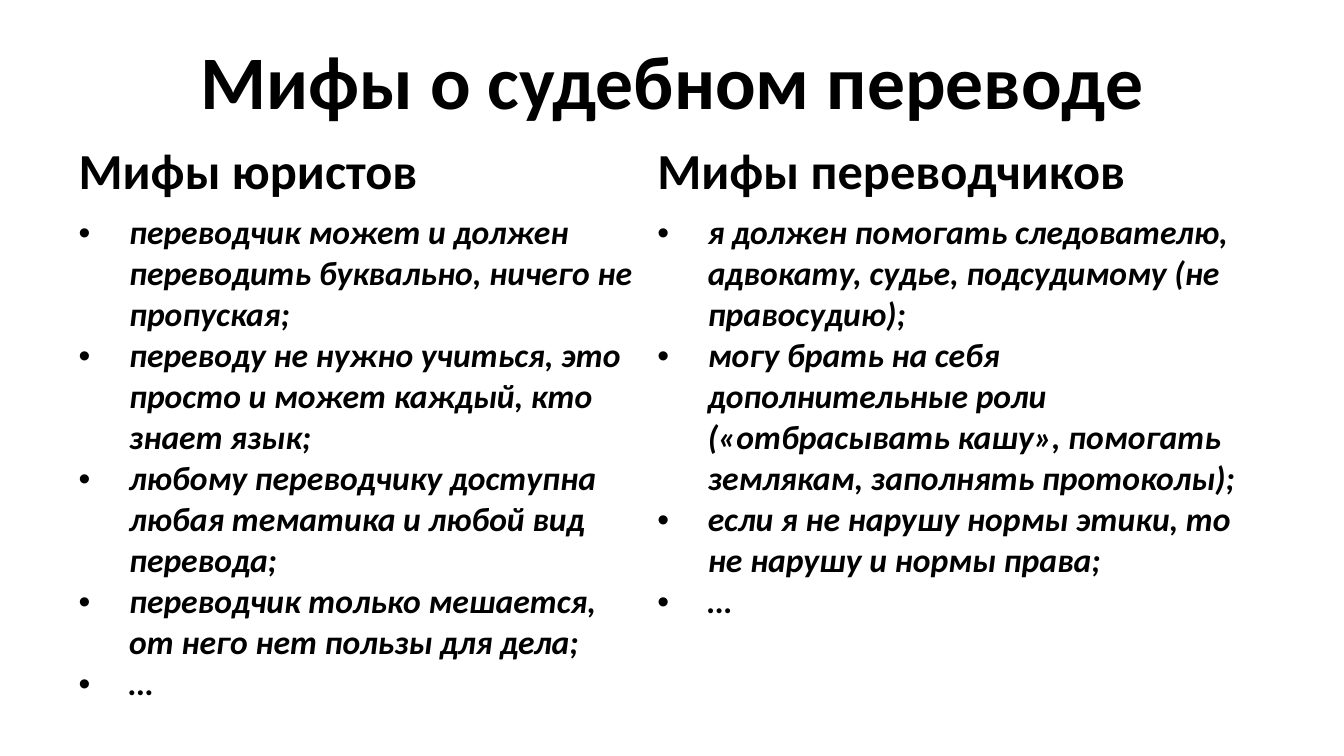
from lxml import etree
from pptx import Presentation
from pptx.dml.color import RGBColor
from pptx.enum.text import MSO_ANCHOR, PP_ALIGN
from pptx.oxml import parse_xml
from pptx.oxml.ns import nsdecls, qn
from pptx.util import Inches, Pt

CENTER = PP_ALIGN.CENTER
MIDDLE = MSO_ANCHOR.MIDDLE
FONT = "Calibri"
BLACK = "000000"
WHITE = "FFFFFF"

MYTHS = {
    "Мифы юристов": [
        "переводчик может и должен переводить буквально, ничего не пропуская;",
        "переводу не нужно учиться, это просто и может каждый, кто знает язык;",
        "любому переводчику доступна любая тематика и любой вид перевода;",
        "переводчик только мешается, от него нет пользы для дела;",
        "…",
    ],
    "Мифы переводчиков": [
        "я должен помогать следователю, адвокату, судье, подсудимому (не правосудию);",
        "могу брать на себя дополнительные роли («отбрасывать кашу», помогать "
        "землякам, заполнять протоколы);",
        "если я не нарушу нормы этики, то не нарушу и нормы права;",
        "…",
    ],
}


def color(hex_value):
    return RGBColor.from_string(hex_value)


def style_runs(paragraph, size, italic=False):
    for run in paragraph.runs:
        run.font.name = FONT
        run.font.size = Pt(size)
        run.font.bold = True
        run.font.italic = italic
        run.font.color.rgb = color(BLACK)


prs = Presentation()
prs.slide_width = Inches(13.33)
prs.slide_height = Inches(7.5)
slide = prs.slides.add_slide(prs.slide_layouts[6])

# Table of myths, one column per profession
myths = slide.shapes.add_table(
    2, 2, Inches(0.68), Inches(1.35), Inches(11.97), Inches(5.73)
).table
for column, width in zip(myths.columns, (5.74, 6.23)):
    column.width = Inches(width)
for row, height in zip(myths.rows, (0.55, 5.03)):
    row.height = Inches(height)

for col, (heading, items) in enumerate(MYTHS.items()):
    heading_cell = myths.cell(0, col)
    heading_cell.text_frame.text = heading
    style_runs(heading_cell.text_frame.paragraphs[0], 36)

    # Bulleted list under the heading
    list_cell = myths.cell(1, col)
    list_cell.text_frame.text = "\n".join(items)
    for paragraph in list_cell.text_frame.paragraphs:
        properties = paragraph._p.get_or_add_pPr()
        properties.set("marL", str(Inches(0.5)))
        properties.set("indent", str(-Inches(0.5)))
        etree.SubElement(properties, qn("a:buFont"), typeface="Arial")
        etree.SubElement(properties, qn("a:buChar"), char="•")
        style_runs(paragraph, 24, italic=True)

    # White fill and borders, thicker under the heading
    for cell, bottom_width in ((heading_cell, 3), (list_cell, 1)):
        cell.fill.solid()
        cell.fill.fore_color.rgb = color(WHITE)
        borders = (("lnL", 1), ("lnR", 1), ("lnT", 1), ("lnB", bottom_width))
        for position, (side, width) in enumerate(borders):
            cell._tc.tcPr.insert(position, parse_xml(
                f'<a:{side} {nsdecls("a")} w="{Pt(width)}"><a:solidFill>'
                f'<a:srgbClr val="{WHITE}"/></a:solidFill></a:{side}>'
            ))

# Title with a soft text shadow
title = slide.shapes.add_textbox(
    Inches(0), Inches(0.29), Inches(13.33), Inches(1.11)
).text_frame
title.word_wrap = True
title.vertical_anchor = MIDDLE
title.text = "Мифы о судебном переводе"
title_line = title.paragraphs[0]
title_line.alignment = CENTER
title_line.line_spacing = 0.9
style_runs(title_line, 54)
title_fill = title_line.runs[0]._r.rPr.find(qn("a:solidFill"))
title_fill.addnext(parse_xml(
    f'<a:effectLst {nsdecls("a")}>'
    f'<a:outerShdw blurRad="{Pt(3)}" dist="{Pt(3)}" dir="2700000" algn="tl">'
    f'<a:srgbClr val="{BLACK}"><a:alpha val="43000"/></a:srgbClr>'
    '</a:outerShdw></a:effectLst>'
))

prs.save("out.pptx")
